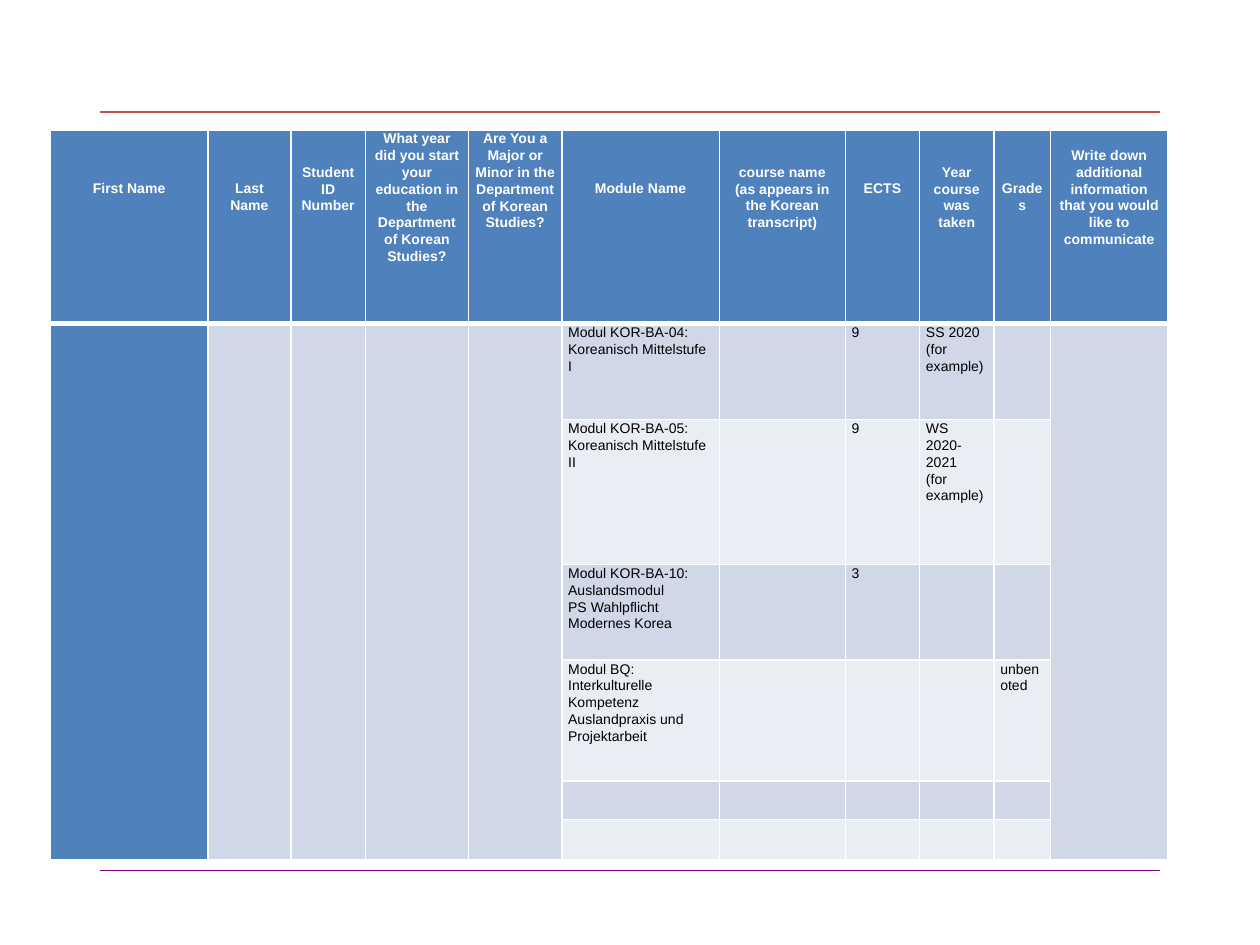
from lxml.etree import SubElement
from pptx import Presentation
from pptx.dml.color import RGBColor
from pptx.enum.shapes import MSO_CONNECTOR
from pptx.enum.text import PP_ALIGN
from pptx.oxml.ns import qn
from pptx.util import Inches, Pt

WHITE = RGBColor(0xFF, 0xFF, 0xFF)
BLACK = RGBColor(0, 0, 0)
BLUE = RGBColor(0x4F, 0x81, 0xBD)
BANDS = [RGBColor(0xD0, 0xD8, 0xE8), RGBColor(0xE9, 0xED, 0xF4)]
RED = RGBColor(0xC0, 0x50, 0x4D)
PURPLE = RGBColor(0x80, 0, 0x80)

LINE = 0.133  # height of one line of 8 pt text, in inches
COLS = [1.25, 0.66, 0.59, 0.82, 0.74, 1.25, 1, 0.59, 0.59, 0.45, 0.93]
ROWS = [1.54, 0.76, 1.15, 0.76, 0.96, 0.3, 0.32]
SPANS = [0, 1, 2, 3, 4, 10]  # columns merged below the header

# Header text and the number of lines it is set down by
HEADS = [
    (3, ["First Name"]),
    (3, ["Last Name"]),
    (2, ["Student ID Number"]),
    (0, ["What year did you start your education in the Department of Korean Studies?"]),
    (0, ["Are You a Major or Minor in the Department of Korean Studies?"]),
    (3, ["Module Name"]),
    (2, ["course name", "(as appears in the Korean transcript)"]),
    (3, ["ECTS"]),
    (2, ["Year course was taken"]),
    (3, ["Grades"]),
    (1, ["Write down additional information that you would like to communicate"]),
]
# Body text by row: {column: paragraphs}
BODY = [
    {5: ["Modul KOR-BA-04:", "Koreanisch Mittelstufe I"], 7: ["9"],
     8: ["SS 2020 (for example)"]},
    {5: ["Modul KOR-BA-05: Koreanisch Mittelstufe II"], 7: ["9"],
     8: ["WS 2020-2021", "(for example)"]},
    {5: ["Modul KOR-BA-10: Auslandsmodul", "PS Wahlpflicht Modernes Korea"], 7: ["3"]},
    {5: ["Modul BQ: Interkulturelle Kompetenz", "Auslandpraxis und Projektarbeit"],
     9: ["unbenoted"]},
    {},
    {},
]


def add_rule(slide, left, top, width, color):
    rule = slide.shapes.add_connector(
        MSO_CONNECTOR.STRAIGHT, Inches(left), Inches(top), Inches(left + width), Inches(top))
    rule.line.color.rgb = color
    rule.line.width = Pt(0.75)
    SubElement(rule._element.spPr, qn("a:effectLst"))


def style_cell(cell, fill, top=1, bottom=1):
    """Set margins, white borders (top and bottom widths in points) and fill."""
    cell.margin_left = cell.margin_right = Inches(0.05)
    cell.margin_top = cell.margin_bottom = 0
    props = cell._tc.get_or_add_tcPr()
    for side, width in (("L", 1), ("R", 1), ("T", top), ("B", bottom)):
        edge = SubElement(props, qn(f"a:ln{side}"), w=str(Pt(width)))
        paint = SubElement(edge, qn("a:solidFill"))
        SubElement(paint, qn("a:srgbClr"), val=str(WHITE))
    cell.fill.solid()
    cell.fill.fore_color.rgb = fill


def write_cell(cell, texts, color, bold=False, align=PP_ALIGN.LEFT):
    frame = cell.text_frame
    for i, text in enumerate(texts):
        para = frame.add_paragraph() if i else frame.paragraphs[0]
        para.alignment = align
        para.line_spacing = 1.07
        run = para.add_run()
        run.text = text
        run.font.name = "Arial"
        run.font.size = Pt(8)
        run.font.bold = bold
        run.font.color.rgb = color


def add_courses(slide, left, top):
    table = slide.shapes.add_table(
        len(ROWS), len(COLS), Inches(left), Inches(top),
        Inches(sum(COLS)), Inches(sum(ROWS))).table
    table.first_row = table.horz_banding = False
    for col, width in zip(table.columns, COLS):
        col.width = Inches(width)
    for row, height in zip(table.rows, ROWS):
        row.height = Inches(height)

    for c, (drop, texts) in enumerate(HEADS):
        cell = table.cell(0, c)
        style_cell(cell, BLUE, bottom=3)
        cell.margin_top = Inches(drop * LINE)
        write_cell(cell, texts, WHITE, True, PP_ALIGN.CENTER)

    for r, texts in enumerate(BODY, 1):
        for c in range(len(COLS)):
            band = BANDS[0] if c in SPANS else BANDS[(r - 1) % 2]
            cell = table.cell(r, c)
            style_cell(cell, band if c else BLUE, top=3 if r == 1 else 1)
            write_cell(cell, texts.get(c, []), BLACK)
    for c in SPANS:
        table.cell(1, c).merge(table.cell(len(BODY), c))


def main():
    deck = Presentation()
    deck.slide_width, deck.slide_height = Inches(10), Inches(7.5)
    slide = deck.slides.add_slide(deck.slide_layouts[6])
    add_rule(slide, 0.79, 0.89, 8.42, RED)
    add_rule(slide, 0.79, 6.91, 8.42, PURPLE)
    add_courses(slide, 0.4, 1.03)
    deck.save("out.pptx")


if __name__ == "__main__":
    main()
